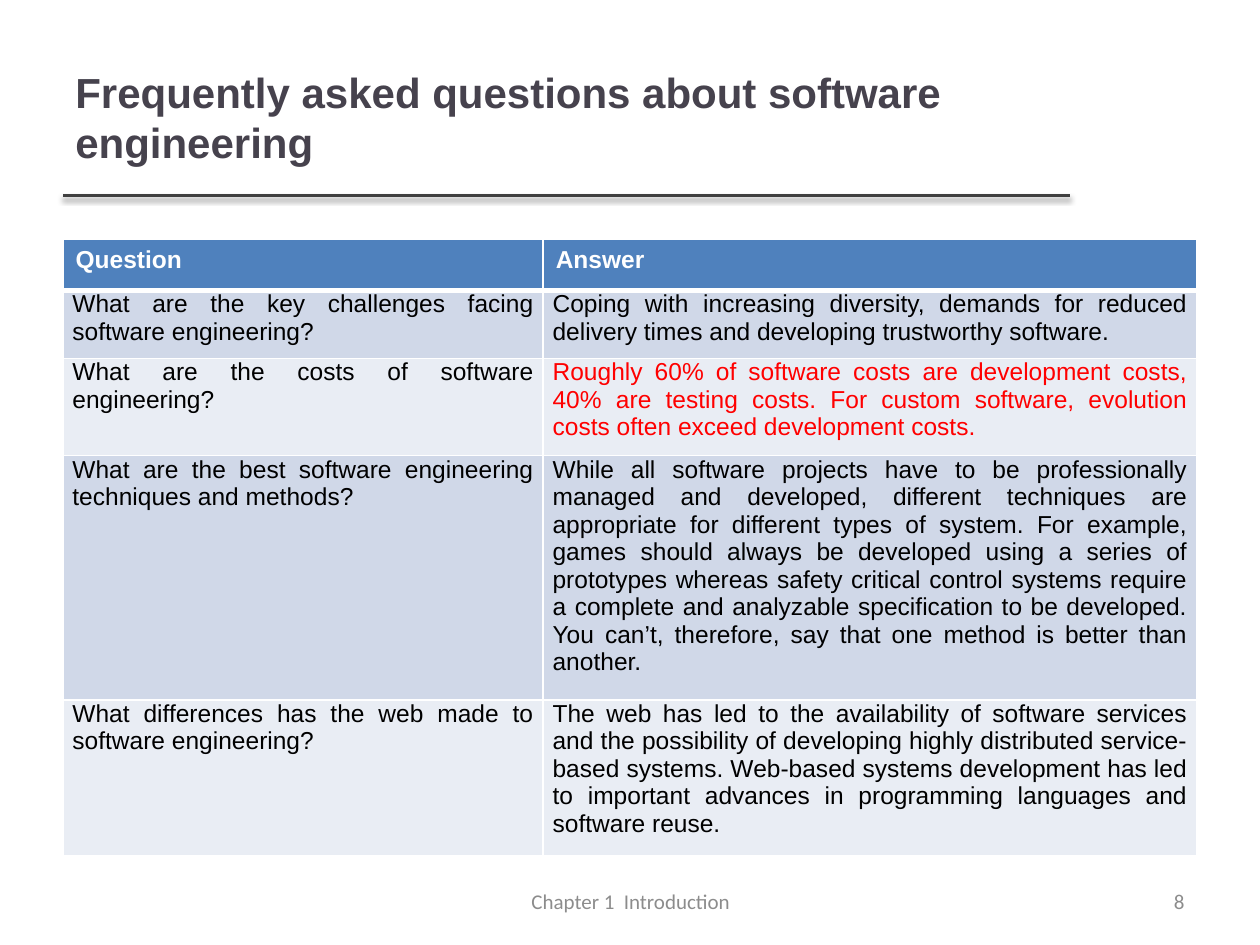
from lxml.etree import SubElement
from pptx import Presentation
from pptx.dml.color import RGBColor
from pptx.enum.shapes import MSO_CONNECTOR
from pptx.enum.text import MSO_ANCHOR, PP_ALIGN
from pptx.oxml import parse_xml
from pptx.oxml.ns import nsdecls, qn
from pptx.util import Cm, Pt

COLORS = {
    "title": "46424D", "rule": "404040", "header": "4F81BD",
    "odd_row": "D0D8E8", "even_row": "E9EDF4", "border": "FFFFFF",
    "header_text": "FFFFFF", "text": "000000", "highlight": "FF0000",
    "footer": "8C8C8C",
}
FAQ = [
    ("Question", "Answer"),
    ("What are the key challenges facing software engineering?",
     "Coping with increasing diversity, demands for reduced delivery times and "
     "developing trustworthy software."),
    ("What are the costs of software engineering?",
     "Roughly 60% of software costs are development costs, 40% are testing costs. "
     "For custom software, evolution costs often exceed development costs."),
    ("What are the best software engineering techniques and methods?",
     "While all software projects have to be professionally managed and developed, "
     "different techniques are appropriate for different types of system. For example, "
     "games should always be developed using a series of prototypes whereas safety "
     "critical control systems require a complete and analyzable specification to be "
     "developed. You can’t, therefore, say that one method is better than another."),
    ("What differences has the web made to software engineering?",
     "The web has led to the availability of software services and the possibility of "
     "developing highly distributed service-based systems. Web-based systems development "
     "has led to important advances in programming languages and software reuse."),
]
HIGHLIGHTED = (2, 1)


def style(paragraph, font_name, size, color, align, bold=False):
    paragraph.alignment = align
    font = paragraph.font
    font.name, font.size, font.bold = font_name, Pt(size), bold
    font.color.rgb = RGBColor.from_string(COLORS[color])


def add_border(cell, side, width):
    line = SubElement(cell._tc.get_or_add_tcPr(), qn(f"a:ln{side}"), w=str(Pt(width)))
    fill = SubElement(line, qn("a:solidFill"))
    SubElement(fill, qn("a:srgbClr"), val=COLORS["border"])


prs = Presentation()
prs.slide_width, prs.slide_height = Cm(25.4), Cm(19.05)
slide = prs.slides.add_slide(prs.slide_layouts[6])

# Rule under the title, with a soft shadow
rule = slide.shapes.add_connector(
    MSO_CONNECTOR.STRAIGHT, Cm(1.27), Cm(3.94), Cm(21.56), Cm(3.94))
rule.line.width = Pt(2)
rule.line.color.rgb = RGBColor.from_string(COLORS["rule"])
rule._element.spPr.append(parse_xml(
    f'<a:effectLst {nsdecls("a")}>'
    '<a:outerShdw blurRad="40000" dist="20000" dir="5400000" rotWithShape="0">'
    '<a:srgbClr val="000000"><a:alpha val="38000"/></a:srgbClr>'
    '</a:outerShdw></a:effectLst>'))

# Title, footer and slide number
for text, box, look in [
    ("Frequently asked questions about software engineering",
     (1.27, 0.76, 20.27, 3.18), ("Arial", 24, "title", PP_ALIGN.LEFT, True)),
    ("Chapter 1  Introduction",
     (8.69, 17.65, 8.05, 1.02), ("Calibri", 12, "footer", PP_ALIGN.CENTER)),
    ("8", (18.21, 17.65, 5.92, 1.02), ("Calibri", 12, "footer", PP_ALIGN.RIGHT)),
]:
    frame = slide.shapes.add_textbox(*map(Cm, box)).text_frame
    frame.word_wrap = True
    frame.vertical_anchor = MSO_ANCHOR.MIDDLE
    frame.text = text
    style(frame.paragraphs[0], *look)

# Question and answer table; rows grow with their text
ROW_HEIGHT = 1.03
faq_table = slide.shapes.add_table(
    len(FAQ), 2, Cm(1.27), Cm(4.83), Cm(22.86), Cm(ROW_HEIGHT * len(FAQ))).table
for column, width in zip(faq_table.columns, (9.68, 13.18)):
    column.width = Cm(width)

for row, entry in enumerate(FAQ):
    for col, text in enumerate(entry):
        cell = faq_table.cell(row, col)
        cell.text = text
        for side in "LRTB":
            beside_header = (row, side) in ((0, "B"), (1, "T"))
            add_border(cell, side, 3 if beside_header else 1)
        if row == 0:
            fill = "header"
            look = ("header_text", PP_ALIGN.LEFT, True)
        else:
            fill = "odd_row" if row % 2 else "even_row"
            color = "highlight" if (row, col) == HIGHLIGHTED else "text"
            look = (color, PP_ALIGN.JUSTIFY)
            cell.margin_left = cell.margin_right = Cm(0.19)
            cell.margin_top, cell.margin_bottom = Cm(0), Cm(0.18)
        cell.fill.solid()
        cell.fill.fore_color.rgb = RGBColor.from_string(COLORS[fill])
        style(cell.text_frame.paragraphs[0], "Arial", 14, *look)

prs.save("out.pptx")
